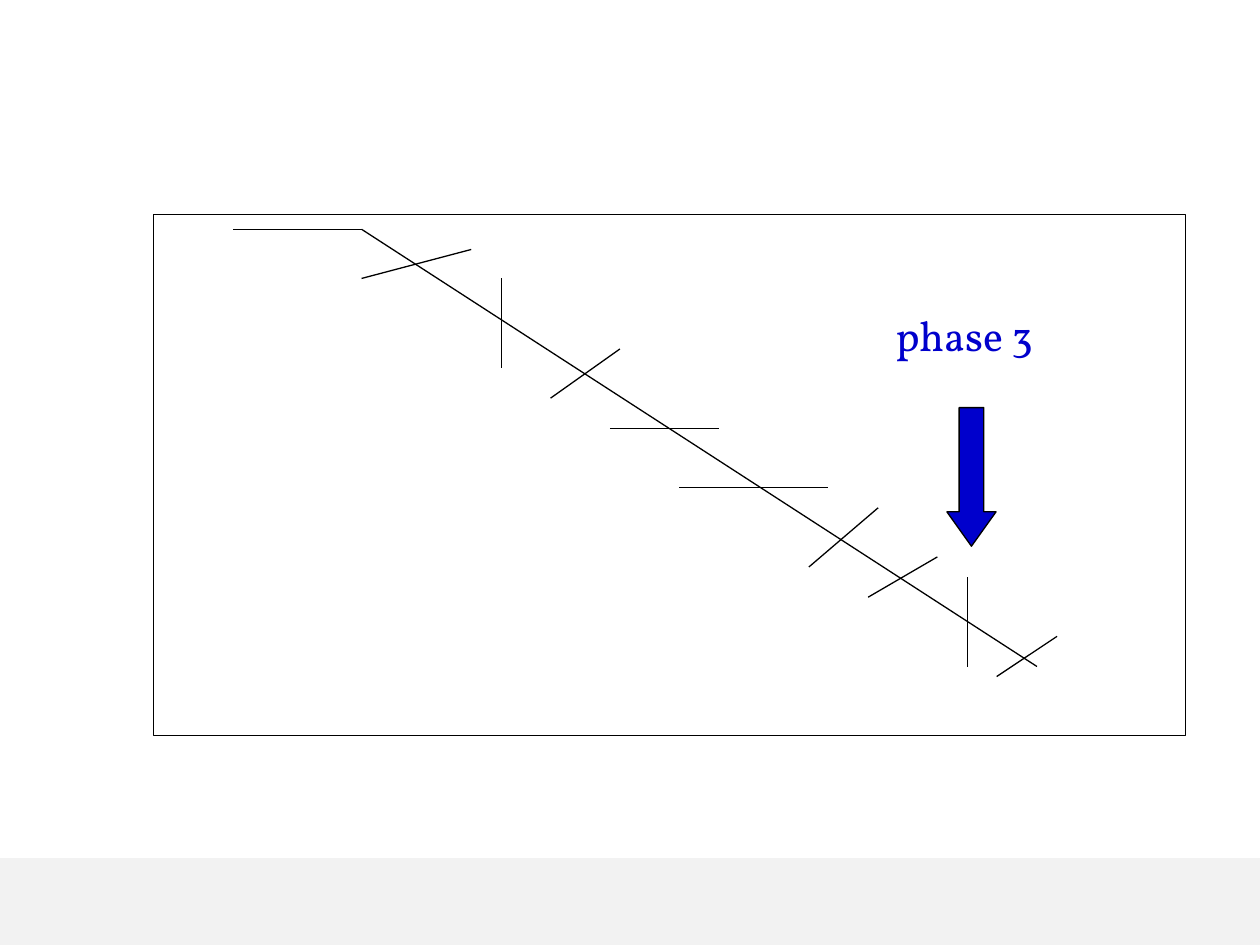
"""Build a slide showing a descending line crossed by ticks, with phase 3 marked."""
from lxml import etree
from pptx import Presentation
from pptx.dml.color import RGBColor
from pptx.enum.shapes import MSO_CONNECTOR, MSO_SHAPE
from pptx.enum.text import MSO_AUTO_SIZE
from pptx.oxml.ns import qn
from pptx.util import Inches, Pt

RECTANGLE = MSO_SHAPE.RECTANGLE
LEFT_ARROW = MSO_SHAPE.LEFT_ARROW
STRAIGHT = MSO_CONNECTOR.STRAIGHT
FIT_SHAPE = MSO_AUTO_SIZE.SHAPE_TO_FIT_TEXT

BLACK = RGBColor(0x00, 0x00, 0x00)
WHITE = RGBColor(0xFF, 0xFF, 0xFF)
LIGHT_GRAY = RGBColor(0xF2, 0xF2, 0xF2)
BLUE = RGBColor(0x00, 0x00, 0xCC)

prs = Presentation()
prs.slide_width = Inches(10)
prs.slide_height = Inches(7.5)
slide = prs.slides.add_slide(prs.slide_layouts[6])


def add_filled(preset, box, fill, outlined=True):
    shape = slide.shapes.add_shape(preset, *map(Inches, box))
    shape.shadow.inherit = False
    shape.fill.solid()
    shape.fill.fore_color.rgb = fill
    if outlined:
        shape.line.color.rgb = BLACK
        shape.line.width = Pt(0.75)
    else:
        shape.line.fill.background()
    return shape


def add_line(ends):
    line = slide.shapes.add_connector(STRAIGHT, *map(Inches, ends))
    line.line.color.rgb = BLACK
    line.line.width = Pt(0.75)
    etree.SubElement(line._element.spPr, qn("a:effectLst"))


add_filled(RECTANGLE, (0, 6.81, 10, 0.69), LIGHT_GRAY, outlined=False)
add_filled(RECTANGLE, (1.22, 1.7, 8.19, 4.14), WHITE)

descent = [(1.85, 1.82, 2.87, 1.82), (2.87, 1.82, 8.23, 5.29)]
ticks = [
    (2.87, 2.21, 3.74, 1.98),
    (3.98, 2.21, 3.98, 2.92),
    (4.37, 3.16, 4.92, 2.77),
    (4.84, 3.4, 5.71, 3.4),
    (5.39, 3.87, 6.57, 3.87),
    (6.97, 4.03, 6.42, 4.5),
    (6.89, 4.74, 7.44, 4.42),
    (7.68, 4.58, 7.68, 5.29),
    (7.91, 5.37, 8.39, 5.05),
]
for ends in descent + ticks:
    add_line(ends)

phase_arrow = add_filled(LEFT_ARROW, (7.16, 3.59, 1.1, 0.39), BLUE)
phase_arrow.rotation = 270
phase_arrow.adjustments[0] = 0.5
phase_arrow.adjustments[1] = 0.7

phase_label = slide.shapes.add_textbox(Inches(7.01), Inches(2.41), Inches(2.44), Inches(0.5))
phase_label.text_frame.word_wrap = True
phase_label.text_frame.auto_size = FIT_SHAPE
phase = phase_label.text_frame.paragraphs[0]
phase.text = "phase 3"
phase.font.name = "Vollkorn"
phase.font.size = Pt(24)
phase.font.color.rgb = BLUE

prs.save("out.pptx")
